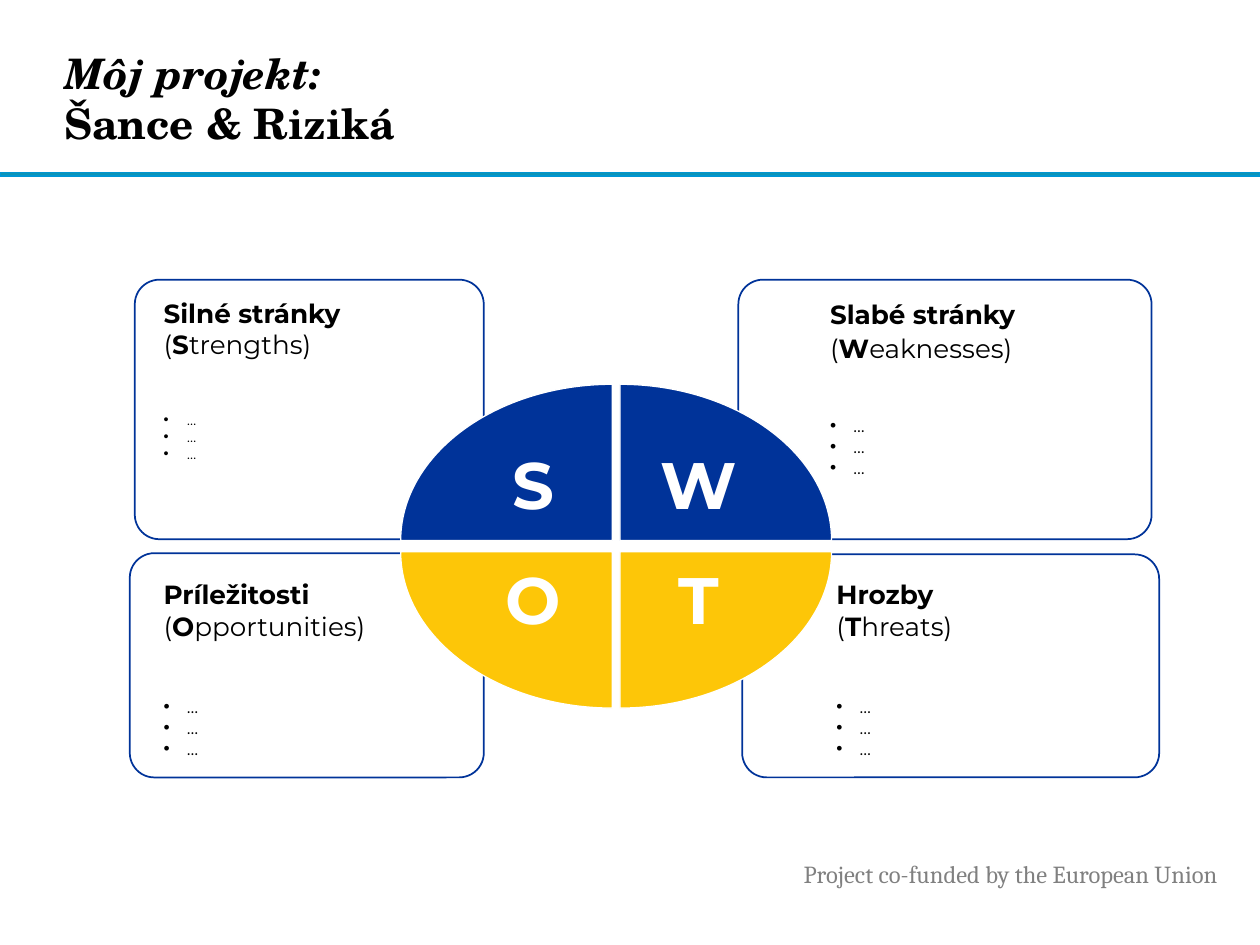
from dataclasses import dataclass

from lxml.etree import SubElement
from pptx import Presentation
from pptx.dml.color import RGBColor
from pptx.enum.shapes import MSO_SHAPE
from pptx.enum.text import MSO_ANCHOR, PP_ALIGN
from pptx.oxml.ns import qn
from pptx.util import Inches, Pt


@dataclass(frozen=True)
class Theme:
    # Colours
    ink: str = "000000"
    white: str = "FFFFFF"
    grey: str = "808080"
    teal: str = "0C94B7"
    edge: str = "0096D3"
    blue: str = "003399"
    gold: str = "FDC608"
    # Fonts and type sizes
    body: str = "Montserrat"
    serif: str = "TeX Gyre Schola"
    foot: str = "Cambria"
    title: float = 24
    head: float = 15
    note: float = 14
    mark: float = 37.5
    item: float = 10
    small: float = 8.2


class Deck:
    """Places elements on a grid of 100 columns by 75 rows."""

    def __init__(self, theme):
        self.theme = theme
        self.prs = Presentation()
        self.prs.slide_width, self.prs.slide_height = Inches(10), Inches(7.5)
        self.cell = self.prs.slide_width / 100
        self.slide = self.prs.slides.add_slide(self.prs.slide_layouts[6])

    def span(self, *cells):
        return [round(c * self.cell) for c in cells]

    def paint(self, shape, fill, line, width):
        shape.shadow.inherit = False
        if fill:
            shape.fill.solid()
            shape.fill.fore_color.rgb = RGBColor.from_string(fill)
        else:
            shape.fill.background()
        shape.line.color.rgb = RGBColor.from_string(line)
        shape.line.width = Pt(width)

    def style(self, run, face, size, color, bold=False, slant=False):
        font = run.font
        font.name, font.size = face, Pt(size)
        font.bold, font.italic = bold, slant
        font.color.rgb = RGBColor.from_string(color)

    def inset(self, frame, left, top, right, bottom):
        frame.margin_left, frame.margin_top = Inches(left), Inches(top)
        frame.margin_right, frame.margin_bottom = Inches(right), Inches(bottom)

    def text(self, *place):
        frame = self.slide.shapes.add_textbox(*self.span(*place)).text_frame
        frame.word_wrap = True
        return frame

    def bar(self, *place):
        rule = self.slide.shapes.add_shape(MSO_SHAPE.RECTANGLE, *self.span(*place))
        self.paint(rule, self.theme.teal, self.theme.edge, 1)

    def card(self, left, top, width, height):
        card = self.slide.shapes.add_shape(
            MSO_SHAPE.ROUNDED_RECTANGLE, *self.span(left, top, width, height))
        card.adjustments[0] = 1.95 / height
        self.paint(card, None, self.theme.blue, 1)

    def bend(self, shape):
        """Turns the first straight side into a quarter of an ellipse."""
        side = shape._element.find(".//" + qn("a:lnTo"))
        ends = [node.find(qn("a:pt")) for node in (side.getprevious(), side)]
        (ax, ay), (bx, by) = [(int(p.get("x")), int(p.get("y"))) for p in ends]
        pull = 0.55
        curve = ((ax, ay + pull * (by - ay)), (bx + pull * (ax - bx), by), (bx, by))
        side.tag = qn("a:cubicBezTo")
        side.remove(ends[1])
        for x, y in curve:
            SubElement(side, qn("a:pt"), x=str(round(x)), y=str(round(y)))

    def wedge(self, letter, fill, east, south):
        """A quarter of the ellipse; east and south are 1 or -1."""
        x, y = 48.9 + 0.3 * east, 43.35 + 0.45 * south
        tip, pole = (x + 16.8 * east, y), (x, y + 12.4 * south)
        path = self.slide.shapes.build_freeform(*self.span(*tip), scale=1.0)
        path.add_line_segments([self.span(*pole), self.span(x, y)], close=True)
        shape = path.convert_to_shape()
        self.bend(shape)
        self.paint(shape, fill, self.theme.white, 0.75)

        frame = shape.text_frame
        far, near = 0.56, 0.13
        sides = (near, far) if east > 0 else (far, near)
        ends = (near, far) if south > 0 else (far, near)
        self.inset(frame, sides[0], ends[0], sides[1], ends[1])
        frame.vertical_anchor = MSO_ANCHOR.TOP if south > 0 else MSO_ANCHOR.BOTTOM
        frame.text = letter
        para = frame.paragraphs[0]
        para.alignment, para.line_spacing = PP_ALIGN.CENTER, 0.9
        self.style(para.runs[0], self.theme.body, self.theme.mark,
                   self.theme.white, bold=True)

    def dot(self, para):
        props = para._p.get_or_add_pPr()
        props.set("marL", str(Inches(0.19)))
        props.set("indent", str(-Inches(0.19)))
        SubElement(props, qn("a:buFont"), typeface="Arial")
        SubElement(props, qn("a:buChar"), char="•")

    def list(self, place, head, term, size, gap, lead=0, flow=False):
        theme, frame = self.theme, self.text(*place)
        frame.text = head + " " if flow else head
        para = frame.paragraphs[0]
        self.style(para.runs[0], theme.body, theme.head, theme.ink, bold=True)

        # English term with a bold initial
        if not flow:
            para = frame.add_paragraph()
            para.space_before = Pt(lead)
        for part, bold in (("(", False), (term[0], True), (term[1:] + ")", False)):
            run = para.add_run()
            run.text = part
            self.style(run, theme.body, theme.head, theme.ink, bold)

        # Open bullets
        for n in range(3):
            para = frame.add_paragraph()
            para.text = "…"
            para.space_before = Pt(0 if n else gap)
            self.dot(para)
            self.style(para.runs[0], theme.body, size, theme.ink, slant=True)

    def title(self, place, first, second):
        frame = self.text(*place)
        self.inset(frame, 0, 0, 0, 0)
        frame.vertical_anchor = MSO_ANCHOR.MIDDLE
        para = frame.paragraphs[0]
        para.text = f"{first}\v{second}"
        for run, slant in zip(para.runs, (True, False)):
            self.style(run, self.theme.serif, self.theme.title,
                       self.theme.ink, True, slant)

    def note(self, place, words):
        frame = self.text(*place)
        frame.text = words
        self.style(frame.paragraphs[0].runs[0], self.theme.foot,
                   self.theme.note, self.theme.grey)


def main():
    theme = Theme()
    deck = Deck(theme)

    # Header and footer
    deck.bar(0, 13.7, 100, 0.3)
    deck.title((5.1, 1.8, 72.7, 11.9), "Môj projekt:", "Šance & Riziká")
    deck.note((62.8, 67.7, 36.6, 3.4), "Project co-funded by the European Union")

    # Outlined cards
    for place in ((10.7, 22.2, 27.7, 20.6), (58.6, 22.2, 32.8, 20.6),
                  (10.3, 43.9, 28.1, 17.8), (58.9, 44, 33.1, 17.7)):
        deck.card(*place)

    # Ellipse in four quarters
    for south, fill, pair in ((-1, theme.blue, "SW"), (1, theme.gold, "OT")):
        for east, letter in zip((-1, 1), pair):
            deck.wedge(letter, fill, east, south)

    # Card texts
    deck.list((12, 23.1, 24.2, 19), "Silné stránky", "Strengths", theme.small, 29)
    deck.list((64.9, 23.2, 28.3, 17.8), "Slabé stránky", "Weaknesses",
              theme.item, 29, lead=1.5)
    deck.list((65.4, 45.4, 27.1, 15.9), "Hrozby", "Threats", theme.item, 31.5)
    deck.list((12, 45.4, 24.6, 14.8), "Príležitosti", "Opportunities",
              theme.item, 31.5, flow=True)

    deck.prs.save("out.pptx")


if __name__ == "__main__":
    main()
